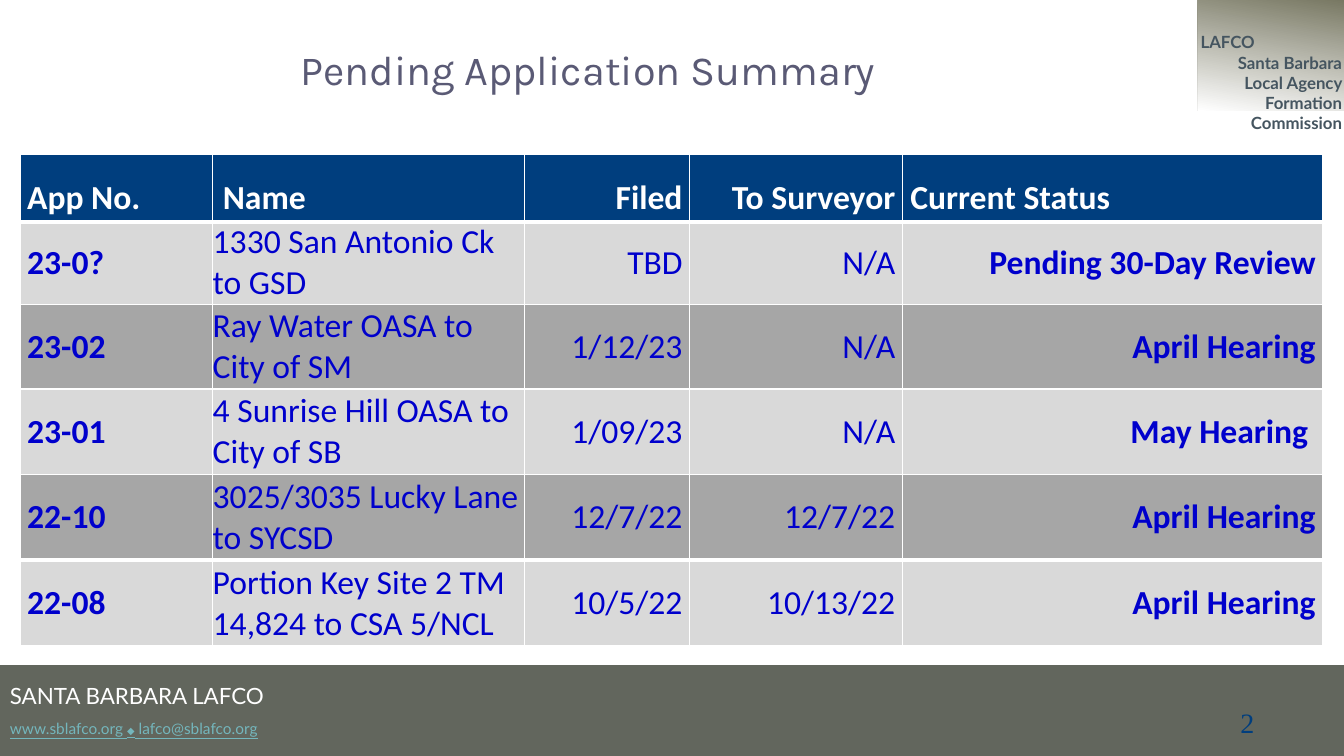
"""Build the pending application summary slide."""
import pptx
import pptx.util
import pptx.dml.color
import pptx.enum.shapes
import pptx.enum.text
import pptx.oxml
import pptx.oxml.ns

Inches = pptx.util.Inches
RGBColor = pptx.dml.color.RGBColor
PP_ALIGN = pptx.enum.text.PP_ALIGN
MSO_ANCHOR = pptx.enum.text.MSO_ANCHOR
RECTANGLE = pptx.enum.shapes.MSO_SHAPE.RECTANGLE

WHITE = RGBColor(0xFF, 0xFF, 0xFF)
OLIVE = RGBColor(0x62, 0x66, 0x5D)
KHAKI = RGBColor(0x78, 0x78, 0x63)
SLATE = RGBColor(0x45, 0x55, 0x60)
TEAL = RGBColor(0x74, 0xB6, 0xBC)
NAVY = RGBColor(0x00, 0x3E, 0x7E)
BLUE = RGBColor(0x00, 0x00, 0xCC)
PURPLE = RGBColor(0x5A, 0x5A, 0x75)
LIGHT_GREY = RGBColor(0xD9, 0xD9, 0xD9)
MID_GREY = RGBColor(0xA6, 0xA6, 0xA6)


def add_run(paragraph, text, size, font, color, bold=False, underline=False):
    run = paragraph.add_run()
    run.text = text
    run.font.size = pptx.util.Pt(size)
    run.font.name = font
    run.font.color.rgb = color
    run.font.bold = bold
    run.font.underline = underline


def add_border(cell, side, width):
    cell._tc.get_or_add_tcPr().append(pptx.oxml.parse_xml(
        f'<a:{side} {pptx.oxml.ns.nsdecls("a")} w="{pptx.util.Pt(width)}">'
        f'<a:solidFill><a:srgbClr val="{WHITE}"/></a:solidFill></a:{side}>'))


deck = pptx.Presentation()
deck.slide_width = Inches(13.33)
deck.slide_height = Inches(7.5)
slide = deck.slides.add_slide(deck.slide_layouts[5])
shapes = slide.shapes

title = shapes.title
title.left, title.top = Inches(0), Inches(0.43)
title.width, title.height = Inches(11.67), Inches(0.55)
title.text_frame.vertical_anchor = MSO_ANCHOR.BOTTOM
title_line = title.text_frame.paragraphs[0]
title_line.alignment = PP_ALIGN.CENTER
add_run(title_line, "Pending Application Summary", 29.6, "Karla", PURPLE)

footer = shapes.add_shape(RECTANGLE, Inches(0), Inches(6.6), Inches(13.33), Inches(0.9))
footer.fill.solid()
footer.fill.fore_color.rgb = OLIVE
footer.text_frame.vertical_anchor = MSO_ANCHOR.MIDDLE
agency = footer.text_frame.paragraphs[0]
agency.alignment = PP_ALIGN.LEFT
add_run(agency, "SANTA BARBARA LAFCO", 16, "Lato", WHITE)
contact = footer.text_frame.add_paragraph()
contact.alignment = PP_ALIGN.LEFT
for text, size in [("www.sblafco.org ", 11), ("◆", 7), (" lafco@sblafco.org", 11)]:
    add_run(contact, text, size, "Lato", TEAL, underline=True)
add_run(contact, " ", 18, "Lato", TEAL)

corner = shapes.add_shape(RECTANGLE, Inches(11.88), Inches(0), Inches(1.45), Inches(1.1))
corner.fill.gradient()
corner.fill.gradient_angle = 260
for stop, position, color in zip(corner.fill.gradient_stops, (0, 1), (KHAKI, WHITE)):
    stop.position = position
    stop.color.rgb = color

for panel in (footer, corner):
    panel.shadow.inherit = False
    panel.line.fill.background()

commission = shapes.add_textbox(Inches(11.81), Inches(0.27), Inches(1.6), Inches(0.4)).text_frame
commission.word_wrap = True
acronym = commission.paragraphs[0]
acronym.alignment = PP_ALIGN.JUSTIFY
add_run(acronym, "LAFCO ", 12, "Lato", SLATE, bold=True)
full_name = commission.add_paragraph()
full_name.alignment = PP_ALIGN.RIGHT
add_run(full_name, "Santa Barbara Local Agency Formation Commission", 12, "Lato", SLATE, bold=True)

page = shapes.add_textbox(Inches(11.67), Inches(6.95), Inches(0.87), Inches(0.55)).text_frame
page.word_wrap = True
page.paragraphs[0].alignment = PP_ALIGN.RIGHT
add_run(page.paragraphs[0], "2", 20, "Times New Roman", NAVY)

applications = [
    ("App No.", "Name", "Filed", "To Surveyor", "Current Status"),
    ("23-0?", "1330 San Antonio Ck to GSD", "TBD", "N/A", "Pending 30-Day Review"),
    ("23-02", "Ray Water OASA to City of SM", "1/12/23", "N/A", "April Hearing"),
    ("23-01", "4 Sunrise Hill OASA to City of SB", "1/09/23", "N/A", "May Hearing "),
    ("22-10", "3025/3035 Lucky Lane to SYCSD", "12/7/22", "12/7/22", "April Hearing"),
    ("22-08", "Portion Key Site 2 TM 14,824 to CSA 5/NCL", "10/5/22", "10/13/22", "April Hearing"),
]
column_widths = [1.91, 3.09, 1.64, 2.11, 4.17]
row_heights = [0.67, 0.82, 0.84, 0.85, 0.85, 0.85]
header_indents = [0.07, 0.1, 0, 0, 0.08]
body_indents = [0.07, 0, 0, 0, 0]
last_row = len(applications) - 1

summary = shapes.add_table(len(applications), len(column_widths), Inches(0.2), Inches(1.53),
                           Inches(sum(column_widths)), Inches(sum(row_heights))).table
for column, width in zip(summary.columns, column_widths):
    column.width = Inches(width)

for r, application in enumerate(applications):
    summary.rows[r].height = Inches(row_heights[r])
    is_header = r == 0
    row_fill = NAVY if is_header else LIGHT_GREY if r % 2 else MID_GREY
    indents = header_indents if is_header else body_indents
    for c, text in enumerate(application):
        cell = summary.cell(r, c)
        right_aligned = c in (2, 3) or (c == 4 and not is_header)
        cell.margin_top = cell.margin_bottom = 0
        cell.margin_left = Inches(indents[c])
        cell.margin_right = Inches(0.07 if right_aligned else 0)
        cell.vertical_anchor = MSO_ANCHOR.MIDDLE
        add_border(cell, "lnL", 1)
        add_border(cell, "lnR", 1)
        add_border(cell, "lnT", 3 if r in (1, last_row) else 1)
        add_border(cell, "lnB", 3 if r in (0, last_row - 1) else 1)
        cell.fill.solid()
        cell.fill.fore_color.rgb = row_fill
        entry = cell.text_frame.paragraphs[0]
        entry.alignment = PP_ALIGN.RIGHT if right_aligned else PP_ALIGN.LEFT
        entry.line_spacing = 1.5 if is_header else 1.0
        add_run(entry, text, 24, "Calibri", WHITE if is_header else BLUE,
                bold=is_header or c in (0, 4))

deck.save("out.pptx")
